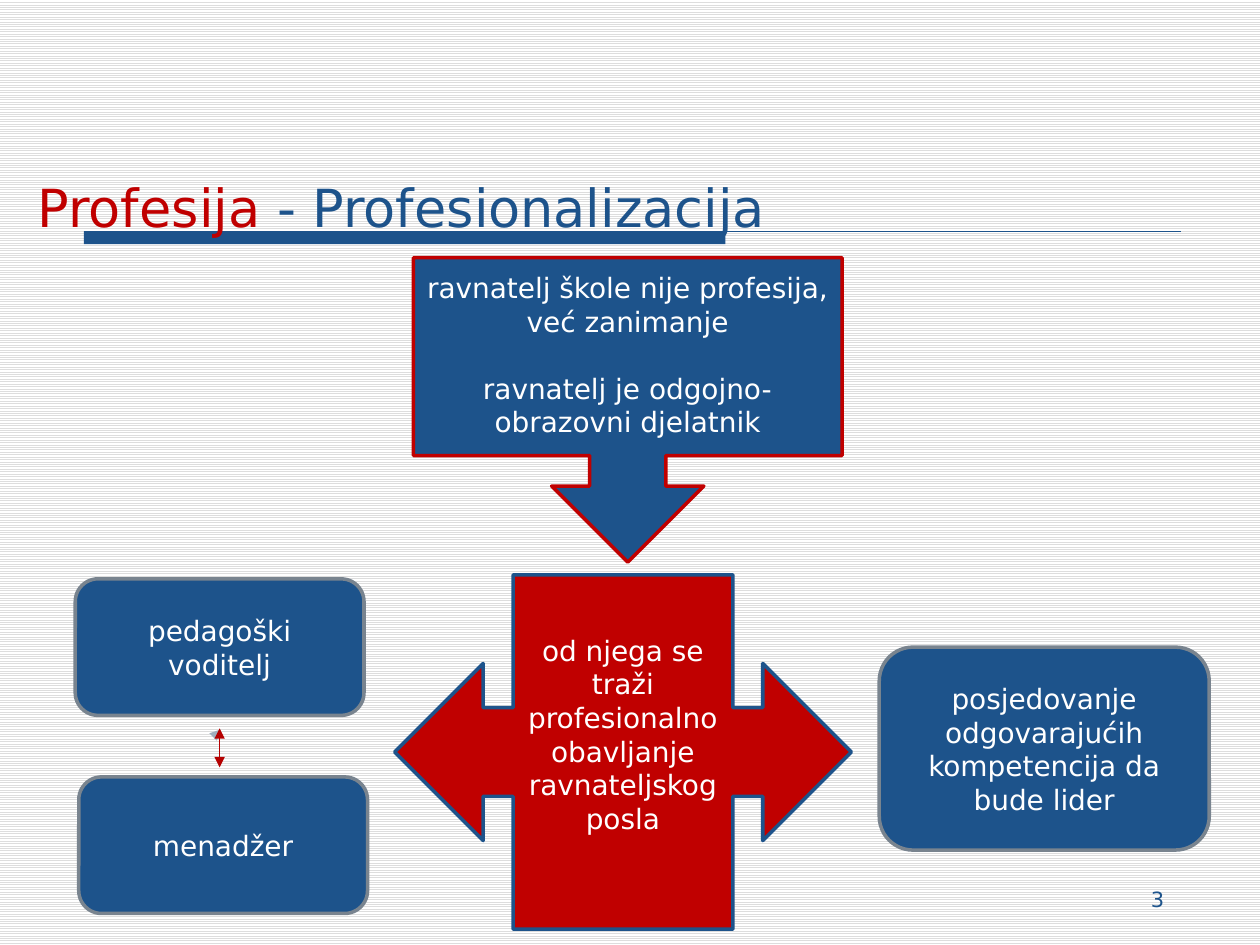
from lxml.etree import SubElement
from pptx import Presentation
from pptx.dml.color import RGBColor
from pptx.enum.dml import MSO_PATTERN
from pptx.enum.shapes import MSO_CONNECTOR, MSO_SHAPE
from pptx.enum.text import MSO_ANCHOR, PP_ALIGN
from pptx.oxml.ns import qn
from pptx.util import Pt

FONT = "DejaVu Sans"
BLUE = RGBColor(0x1D, 0x53, 0x8B)
RED = RGBColor(0xC0, 0x00, 0x00)
ARROW_RED = RGBColor(0xB5, 0x00, 0x00)
PALE_BLUE = RGBColor(0x9F, 0xAE, 0xBD)
GRAY = RGBColor(0x79, 0x84, 0x8F)
STRIPE = RGBColor(0xDD, 0xDD, 0xDD)
WHITE = RGBColor(0xFF, 0xFF, 0xFF)


def format_font(font, size, color):
    font.name = FONT
    font.size = Pt(size)
    font.color.rgb = color


def set_background(slide):
    fill = slide.background.fill
    fill.patterned()
    fill.pattern = MSO_PATTERN.LIGHT_HORIZONTAL
    fill.fore_color.rgb = STRIPE
    fill.back_color.rgb = WHITE


def add_title(slide, parts):
    title = slide.shapes.title
    title.left, title.top, title.width, title.height = Pt(14.4), Pt(105.8), Pt(691), Pt(34)
    title.text_frame.vertical_anchor = MSO_ANCHOR.BOTTOM
    title.text_frame.word_wrap = True
    paragraph = title.text_frame.paragraphs[0]
    paragraph.alignment = PP_ALIGN.LEFT
    for text, color in parts:
        run = paragraph.add_run()
        run.text = text
        format_font(run.font, 30, color)
    title.element.getparent().append(title.element)


def add_block(slide, preset, left, top, width, height, fill, outline=None):
    shape = slide.shapes.add_shape(preset, Pt(left), Pt(top), Pt(width), Pt(height))
    shape.shadow.inherit = False
    shape.fill.solid()
    shape.fill.fore_color.rgb = fill
    if outline is None:
        shape.line.fill.background()
    else:
        shape.line.color.rgb = outline
        shape.line.width = Pt(2)
    return shape


def write_text(shape, text, gap=0, side_inset=7.2, bottom_inset=3.6):
    frame = shape.text_frame
    frame.word_wrap = True
    frame.vertical_anchor = MSO_ANCHOR.MIDDLE
    frame.margin_left = frame.margin_right = Pt(side_inset)
    frame.margin_bottom = Pt(bottom_inset)
    frame.text = text
    for index, paragraph in enumerate(frame.paragraphs):
        paragraph.alignment = PP_ALIGN.CENTER
        paragraph.space_before = Pt(gap if index else 0)
        format_font(paragraph.runs[0].font, 16, WHITE)


def add_line(slide, start, end, color, arrowheads=()):
    line = slide.shapes.add_connector(
        MSO_CONNECTOR.STRAIGHT, Pt(start[0]), Pt(start[1]), Pt(end[0]), Pt(end[1]))
    line.line.color.rgb = color
    line.line.width = Pt(0.75)
    properties = line.element.spPr
    for arrowhead in arrowheads:
        SubElement(properties.find(qn("a:ln")), qn(arrowhead), type="triangle")
    SubElement(properties, qn("a:effectLst"))


def add_slide_number(slide, number):
    box = slide.shapes.add_textbox(Pt(516), Pt(503.3), Pt(156.4), Pt(28))
    box.text_frame.word_wrap = True
    paragraph = box.text_frame.paragraphs[0]
    paragraph.text = number
    paragraph.alignment = PP_ALIGN.RIGHT
    format_font(paragraph.runs[0].font, 12, BLUE)


def main():
    presentation = Presentation()
    presentation.slide_width, presentation.slide_height = Pt(720), Pt(540)
    slide = presentation.slides.add_slide(presentation.slide_layouts[5])
    set_background(slide)

    add_block(slide, MSO_SHAPE.RECTANGLE, 48, 132.3, 366.5, 7.2, BLUE)
    add_line(slide, (48, 132.3), (674.6, 132.3), BLUE)
    add_slide_number(slide, "3")
    add_title(slide, [("Profesija", RED), (" - Profesionalizacija", BLUE)])

    occupation = add_block(
        slide, MSO_SHAPE.DOWN_ARROW_CALLOUT, 236.2, 147.3, 245, 174, BLUE, RED)
    write_text(occupation, "ravnatelj škole nije profesija, već zanimanje\n"
               "ravnatelj je odgojno-obrazovni djelatnik", gap=19, bottom_inset=6)

    demand = add_block(
        slide, MSO_SHAPE.LEFT_RIGHT_ARROW_CALLOUT, 225.5, 328.5, 261, 202.5, RED, BLUE)
    write_text(demand, "od njega se traži profesionalno obavljanje ravnateljskog posla",
               bottom_inset=24)

    for text, left, top, width, height in (
        ("menadžer", 45, 444, 165, 78),
        ("posjedovanje odgovarajućih\nkompetencija da bude lider", 502.4, 369.8, 188.6, 116),
        ("pedagoški voditelj", 43, 330.8, 165, 78),
    ):
        role = add_block(slide, MSO_SHAPE.ROUNDED_RECTANGLE, left, top, width, height, BLUE, GRAY)
        write_text(role, text, side_inset=10)

    add_line(slide, (125.3, 417.6), (126, 416.9), PALE_BLUE, ["a:tailEnd"])
    add_line(slide, (125.5, 416.2), (125.5, 438.5), ARROW_RED, ["a:headEnd", "a:tailEnd"])

    presentation.save("out.pptx")


if __name__ == "__main__":
    main()
